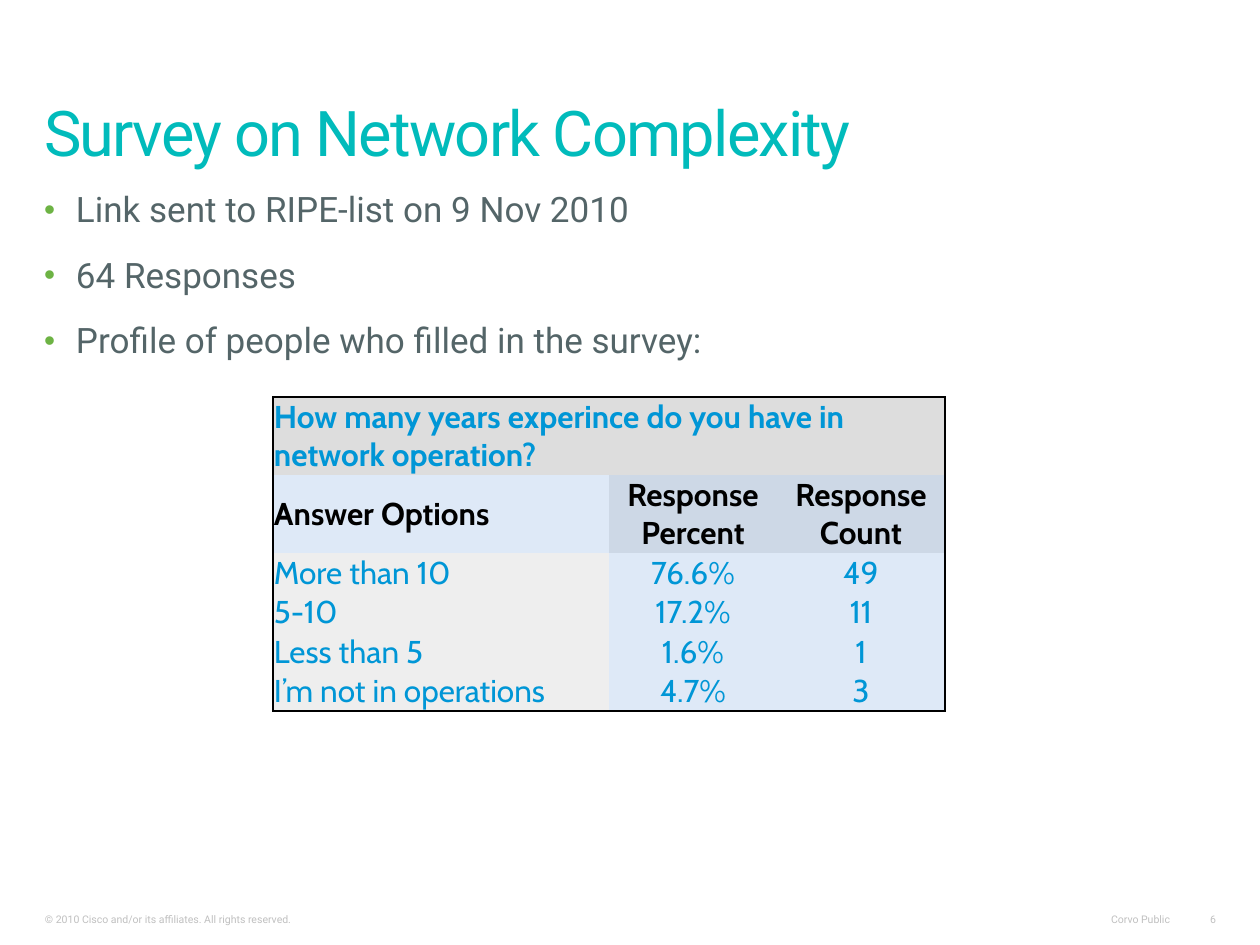
import pptx
import pptx.dml.color
import pptx.enum.text
import pptx.oxml
import pptx.oxml.ns
import pptx.util
from lxml import etree

EMU_PER_PX = 914400 / 126
ANCHOR = pptx.enum.text.MSO_ANCHOR
ALIGN = pptx.enum.text.PP_ALIGN
COLORS = {
    "title": "01BBBB", "body": "546568", "bullet": "6DB344", "footer": "C0C0C0",
    "answer": "0096D6", "heading": "000000", "border": "000000",
    "question": "DDDDDD", "label": "EEEEEE", "value": "DEE9F7", "column": "CDD8E6",
}


def px(length):
    return pptx.util.Emu(round(length * EMU_PER_PX))


def rgb(name):
    return pptx.dml.color.RGBColor.from_string(COLORS[name])


def add_element(parent, tag, **attributes):
    return etree.SubElement(parent, pptx.oxml.ns.qn(tag), attributes)


class SlideBuilder:
    text_font = "Roboto"
    table_font = "Cabin"

    def __init__(self, deck):
        self.page = deck.slides.add_slide(deck.slide_layouts[5])

    def style(self, para, size, color, font=None, bold=False):
        for span in para.runs:
            span.font.name = font or self.text_font
            span.font.size = pptx.util.Pt(size)
            span.font.bold = bold
            span.font.color.rgb = rgb(color)

    def frame(self, shape, anchor, inset_x, inset_y, wrap=True):
        frame = shape.text_frame
        frame.auto_size = pptx.enum.text.MSO_AUTO_SIZE.NONE
        frame.word_wrap = wrap
        frame.vertical_anchor = anchor
        frame.margin_left = frame.margin_right = px(inset_x)
        frame.margin_top = frame.margin_bottom = px(inset_y)
        return frame

    def title(self, text, left, top, width, height):
        shape = self.page.shapes.title
        shape.left, shape.top, shape.width, shape.height = map(px, (left, top, width, height))
        frame = self.frame(shape, ANCHOR.BOTTOM, 12, 6)
        frame.text = text
        para = frame.paragraphs[0]
        para.alignment = ALIGN.LEFT
        para.line_spacing = 0.8
        self.style(para, 36, "title")
        para.runs[0].font._element.set("spc", "-100")

    def bullets(self, lines, left, top, width, height):
        box = self.page.shapes.add_textbox(*map(px, (left, top, width, height)))
        frame = self.frame(box, ANCHOR.TOP, 12, 6)
        frame.text = "\n".join(lines)
        for index, para in enumerate(frame.paragraphs):
            props = para._p.get_or_add_pPr()
            props.set("marL", str(px(32)))
            props.set("indent", str(px(-32)))
            color = add_element(props, "a:buClr")
            add_element(color, "a:srgbClr", val=COLORS["bullet"])
            add_element(props, "a:buSzPct", val="90000")
            add_element(props, "a:buFont", typeface="Arial")
            add_element(props, "a:buChar", char="•")
            para.line_spacing = 0.95
            para.space_before = pptx.util.Pt(14.4 if index else 0)
            self.style(para, 20, "body")

    def footer(self, text, left, width, align=ALIGN.RIGHT, wrap=False):
        box = self.page.shapes.add_textbox(px(left), px(907), px(width), px(24))
        frame = self.frame(box, ANCHOR.BOTTOM, 11, 5, wrap)
        frame.text = text
        frame.paragraphs[0].alignment = align
        self.style(frame.paragraphs[0], 6, "footer")

    def borders(self, cell, sides):
        props = cell._tc.get_or_add_tcPr()
        for index, side in enumerate("LRTB"):
            line = pptx.oxml.parse_xml(
                f'<a:ln{side} {pptx.oxml.ns.nsdecls("a")} w="12700"/>')
            if side in sides:
                fill = add_element(line, "a:solidFill")
                add_element(fill, "a:srgbClr", val=COLORS["border"])
            else:
                add_element(line, "a:noFill")
            props.insert(index, line)

    def cell(self, cell, text, fill, color, bold, align, anchor, sides):
        cell.fill.solid()
        cell.fill.fore_color.rgb = rgb(fill)
        cell.vertical_anchor = anchor
        cell.margin_left = cell.margin_right = cell.margin_top = px(1)
        cell.margin_bottom = 0
        cell.text_frame.text = text
        para = cell.text_frame.paragraphs[0]
        para.alignment = align
        self.style(para, 18, color, self.table_font, bold)
        self.borders(cell, sides)

    def survey_table(self, question, headings, answers, left, top, widths, heights):
        rows = [(question, "", ""), headings, *answers]
        table = self.page.shapes.add_table(
            len(rows), len(widths), px(left), px(top), px(sum(widths)), px(sum(heights))).table
        table.first_row = table.horz_banding = False
        for column, width in zip(table.columns, widths):
            column.width = px(width)
        for row, height in zip(table.rows, heights):
            row.height = px(height)
        table.cell(0, 0).merge(table.cell(0, len(widths) - 1))

        last_row, last_column = len(rows) - 1, len(widths) - 1
        for r, texts in enumerate(rows):
            for c, text in enumerate(texts):
                if r == 0:
                    fill = "question"
                elif r == 1:
                    fill = "column" if c else "value"
                else:
                    fill = "value" if c else "label"
                # Only the outer frame of the table is drawn
                edges = {"L": c == 0, "R": c == last_column or r == 0,
                         "T": r == 0, "B": r == last_row}
                self.cell(
                    table.cell(r, c), text, fill,
                    color="heading" if r == 1 else "answer",
                    bold=r < 2,
                    align=ALIGN.CENTER if c else ALIGN.LEFT,
                    anchor=ANCHOR.BOTTOM if r > 1 and c == 0 else ANCHOR.MIDDLE,
                    sides=[side for side, drawn in edges.items() if drawn])


def main():
    deck = pptx.Presentation()
    deck.slide_width, deck.slide_height = px(1260), px(945)
    builder = SlideBuilder(deck)

    # Footer line
    builder.footer("© 2010 Cisco and/or its affiliates. All rights reserved.",
                   34, 454, ALIGN.LEFT, wrap=True)
    builder.footer("Corvo Public", 1100, 81)
    builder.footer("6", 1192, 35)

    # Title and key facts
    builder.title("Survey on Network Complexity", 32, 59, 1183, 116)
    builder.bullets([
        "Link sent to RIPE-list on 9 Nov 2010",
        "64 Responses",
        "Profile of people who filled in the survey:",
    ], 32, 185, 1178, 684)

    # Survey results
    builder.survey_table(
        "How many years experince do you have in network operation?",
        ("Answer Options", "Response Percent", "Response Count"),
        [
            ("More than 10", "76.6%", "49"),
            ("5-10", "17.2%", "11"),
            ("Less than 5", "1.6%", "1"),
            ("I’m not in operations", "4.7%", "3"),
        ],
        left=273, top=397, widths=[336, 168, 168], heights=[78, 78] + [39] * 4)

    deck.save("out.pptx")


if __name__ == "__main__":
    main()
